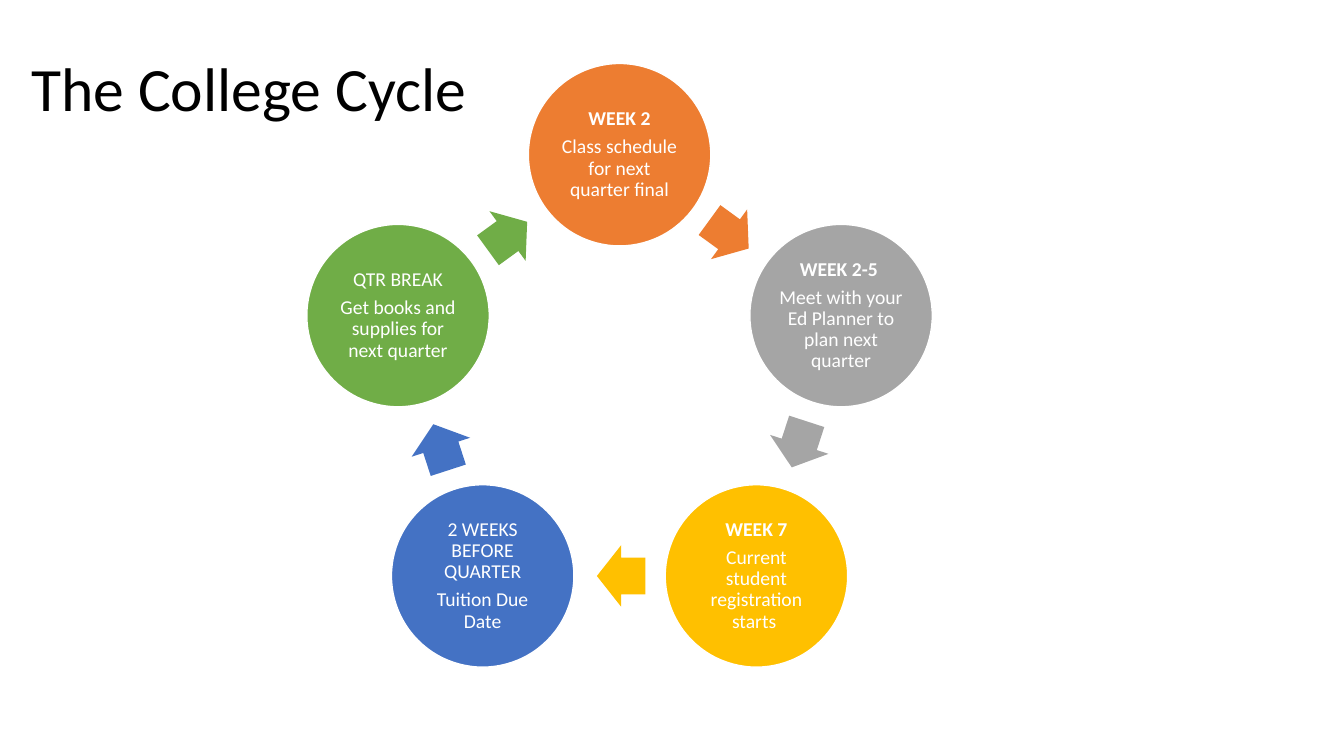
import math

from pptx import Presentation
from pptx.dml.color import RGBColor
from pptx.enum import shapes, text
from pptx.util import Inches, Pt

FONT = "Calibri"
WHITE = "FFFFFF"
CENTER_X, CENTER_Y, RADIUS = 6.145, 3.845, 2.31
CIRCLE = 1.81
ARROW_W, ARROW_H = 0.48, 0.61
ARROW_SETBACK = 0.015

# Heading, heading is bold, task, colour
STAGES = [
    ("WEEK 2", True, "Class schedule for next quarter final", "ED7D31"),
    ("WEEK 2-5 ", True, "Meet with your Ed Planner to plan next quarter", "A5A5A5"),
    ("WEEK 7", True, "Current student registration starts ", "FFC000"),
    ("2 WEEKS BEFORE QUARTER", False, "Tuition Due Date", "4472C4"),
    ("QTR BREAK", False, "Get books and supplies for next quarter", "70AD47"),
]
STEP = 360 / len(STAGES)


def rgb(value):
    return RGBColor.from_string(value)


def style(paragraph, size, color, bold=False):
    paragraph.line_spacing = 0.9
    paragraph.font.name = FONT
    paragraph.font.size = Pt(size)
    paragraph.font.bold = bold
    paragraph.font.color.rgb = rgb(color)


def add_title(slide, wording):
    title = slide.shapes.title
    title.left, title.top = Inches(0.21), Inches(0.18)
    title.width, title.height = Inches(4.87), Inches(1.45)
    frame = title.text_frame
    frame.text = wording
    frame.vertical_anchor = text.MSO_ANCHOR.MIDDLE
    frame.paragraphs[0].alignment = text.PP_ALIGN.LEFT
    style(frame.paragraphs[0], 44, "000000")


def add_centered(slide, preset, x, y, width, height, color):
    shape = slide.shapes.add_shape(
        preset, Inches(x - width / 2), Inches(y - height / 2),
        Inches(width), Inches(height))
    shape.shadow.inherit = False
    shape.fill.solid()
    shape.fill.fore_color.rgb = rgb(color)
    return shape


def add_stage(slide, x, y, heading, bold, task, color):
    circle = add_centered(slide, shapes.MSO_SHAPE.OVAL, x, y, CIRCLE, CIRCLE, color)
    circle.line.color.rgb = rgb(WHITE)
    circle.line.width = Pt(1)
    frame = circle.text_frame
    frame.word_wrap = True
    frame.vertical_anchor = text.MSO_ANCHOR.MIDDLE
    frame.margin_left = frame.margin_right = Inches(0.02)
    frame.margin_top = frame.margin_bottom = Inches(0.02)
    frame.text = f"{heading}\n{task}"
    for paragraph, is_bold in zip(frame.paragraphs, (bold, False)):
        paragraph.alignment = text.PP_ALIGN.CENTER
        paragraph.space_after = Pt(4.9)
        style(paragraph, 14, WHITE, is_bold)


def add_arrow(slide, x, y, rotation, color):
    arrow = add_centered(
        slide, shapes.MSO_SHAPE.RIGHT_ARROW, x, y, ARROW_W, ARROW_H, color)
    arrow.line.fill.background()
    arrow.adjustments[0], arrow.adjustments[1] = 0.6, 0.5
    arrow.rotation = rotation


def on_cycle(degrees, radius):
    """Point at a clockwise angle from the top of the cycle."""
    angle = math.radians(degrees)
    return CENTER_X + radius * math.sin(angle), CENTER_Y - radius * math.cos(angle)


def main():
    prs = Presentation()
    prs.slide_width, prs.slide_height = Inches(13.33), Inches(7.5)
    slide = prs.slides.add_slide(prs.slide_layouts[5])
    add_title(slide, "The College Cycle")

    # Each stage is followed by the arrow to the next one
    chord_radius = RADIUS * math.cos(math.radians(STEP / 2))
    for index, (heading, bold, task, color) in enumerate(STAGES):
        degrees = index * STEP
        add_stage(slide, *on_cycle(degrees, RADIUS), heading, bold, task, color)

        rotation = degrees + STEP / 2
        x, y = on_cycle(rotation, chord_radius)
        heading_angle = math.radians(rotation)
        add_arrow(slide, x - ARROW_SETBACK * math.cos(heading_angle),
                  y - ARROW_SETBACK * math.sin(heading_angle), rotation, color)

    prs.save("out.pptx")


if __name__ == "__main__":
    main()
